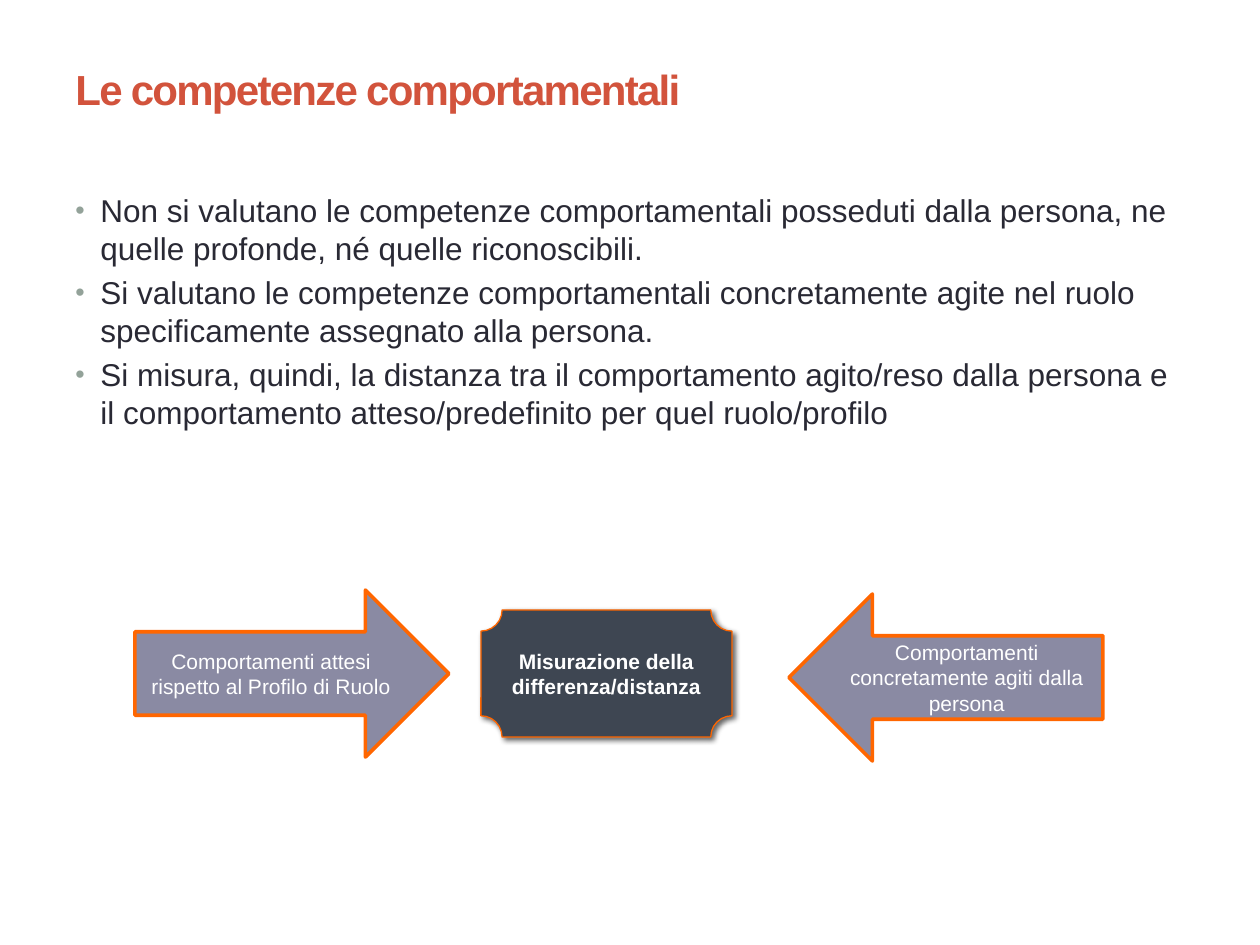
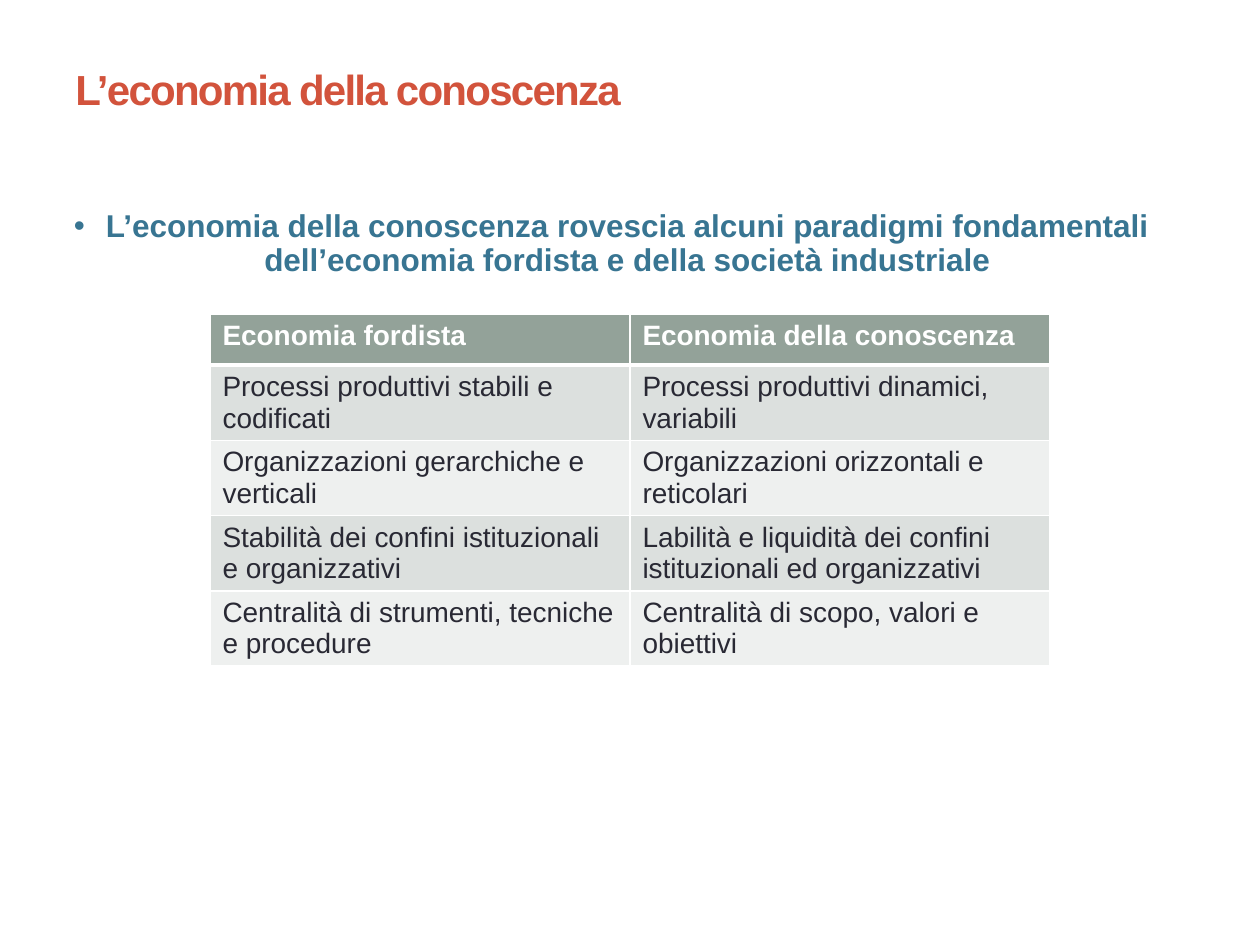
from lxml import etree
from pptx import Presentation
from pptx import util as u
from pptx.dml.color import RGBColor
from pptx.enum import shapes, text
from pptx.oxml import parse_xml
from pptx.oxml.ns import nsdecls, qn

PX = 914400 / 126
INK, WHITE, ORANGE, RED, SAGE = "292934", "FFFFFF", "FF6600", "D2533C", "93A299"
CENTER = text.PP_ALIGN.CENTER
MIDDLE = text.MSO_ANCHOR.MIDDLE


def color(value):
    return RGBColor.from_string(value)


def write(paragraph, words, size, ink, bold=False, leading=1.2, align=None):
    paragraph.alignment = align
    paragraph.line_spacing = u.Pt(round(size * leading, 1))
    run = paragraph.add_run()
    run.text = words
    run.font.name = "Arial"
    run.font.size = u.Pt(size)
    run.font.bold = bold
    run.font.color.rgb = color(ink)
    return run


presentation = Presentation()
presentation.slide_width = round(1260 * PX)
presentation.slide_height = round(945 * PX)

titles = ["Le competenze comportamentali", "L’economia della conoscenza"]
bullet_lists = [
    [
        "Non si valutano le competenze comportamentali posseduti dalla persona, ne quelle profonde, né quelle riconoscibili.",
        "Si valutano le competenze comportamentali concretamente agite nel ruolo specificamente assegnato alla persona.",
        "Si misura, quindi, la distanza tra il comportamento agito/reso dalla persona e il comportamento atteso/predefinito per quel ruolo/profilo",
    ],
    ["L’economia della conoscenza rovescia alcuni paradigmi fondamentali dell’economia fordista e della società industriale"],
]
bullet_styles = [
    dict(box=(63, 185, 1134, 665), indent=25, mark=SAGE, percent=85, ink=INK, bold=False, leading=1.2, align=None),
    dict(box=(40, 204, 1143, 69), indent=32, mark="387592", percent=100, ink="387592", bold=True, leading=1.08, align=CENTER),
]

slides = []
for title, bullets, style in zip(titles, bullet_lists, bullet_styles):
    slide = presentation.slides.add_slide(presentation.slide_layouts[6])
    slides.append(slide)

    title_box = slide.shapes.add_textbox(*[round(n * PX) for n in (63, 48, 1134, 82)])
    title_box.text_frame.word_wrap = True
    title_box.text_frame.vertical_anchor = MIDDLE
    run = write(title_box.text_frame.paragraphs[0], title, 24, RED, bold=True)
    run.font._element.set("spc", "-100")

    body = slide.shapes.add_textbox(*[round(n * PX) for n in style["box"]])
    body.text_frame.word_wrap = True
    for index, words in enumerate(bullets):
        paragraph = body.text_frame.add_paragraph() if index else body.text_frame.paragraphs[0]
        properties = paragraph._p.get_or_add_pPr()
        indent = round(style["indent"] * PX)
        properties.set("marL", str(indent))
        properties.set("indent", str(-indent))
        mark = etree.SubElement(properties, qn("a:buClr"))
        etree.SubElement(mark, qn("a:srgbClr"), val=style["mark"])
        etree.SubElement(properties, qn("a:buSzPct"), val=str(style["percent"] * 1000))
        etree.SubElement(properties, qn("a:buFont"), typeface="Arial")
        etree.SubElement(properties, qn("a:buChar"), char="•")
        if index:
            paragraph.space_before = u.Pt(3.6)
        write(paragraph, words, 18, style["ink"], style["bold"], style["leading"], style["align"])

competence_slide, economy_slide = slides

PLAQUE, ARROW = shapes.MSO_SHAPE.PLAQUE, shapes.MSO_SHAPE.RIGHT_ARROW
diagram = [
    (PLAQUE, (481, 610, 251, 127), "3E4652", 0.75, False, "Misurazione della differenza/distanza"),
    (ARROW, (135, 590, 314, 167), "8A8AA3", 2.08, False, "Comportamenti attesi rispetto al Profilo di Ruolo"),
    (ARROW, (789, 594, 314, 167), "8A8AA3", 2.08, True, "Comportamenti concretamente agiti dalla persona"),
]
for kind, box, fill, line_width, flipped, words in diagram:
    shape = competence_slide.shapes.add_shape(kind, *[round(n * PX) for n in box])
    shape.shadow.inherit = False
    shape.fill.solid()
    shape.fill.fore_color.rgb = color(fill)
    shape.line.color.rgb = color(ORANGE)
    shape.line.width = u.Pt(line_width)
    if flipped:
        shape._element.spPr.xfrm.set("flipH", "1")
    if kind == PLAQUE:
        effects = shape._element.spPr.find(qn("a:effectLst"))
        effects.append(parse_xml(
            f'<a:outerShdw {nsdecls("a")} blurRad="38100" dist="25400" dir="2700000" algn="tl" rotWithShape="0">'
            '<a:srgbClr val="000000"><a:alpha val="60000"/></a:srgbClr></a:outerShdw>'))
    shape.text_frame.word_wrap = True
    shape.text_frame.vertical_anchor = MIDDLE
    write(shape.text_frame.paragraphs[0], words, 12, WHITE, bold=kind == PLAQUE, align=CENTER)

comparison = [
    ("Economia fordista", "Economia della conoscenza"),
    ("Processi produttivi stabili e codificati", "Processi produttivi dinamici, variabili"),
    ("Organizzazioni gerarchiche e verticali", "Organizzazioni orizzontali e reticolari"),
    ("Stabilità dei confini istituzionali e organizzativi", "Labilità e liquidità dei confini istituzionali ed organizzativi"),
    ("Centralità di strumenti, tecniche e procedure", "Centralità di scopo, valori e obiettivi"),
]
frame = economy_slide.shapes.add_table(5, 2, *[round(n * PX) for n in (210, 314, 840, 351)])
table = frame.table
for column in table.columns:
    column.width = round(420 * PX)
for row_index, entries in enumerate(comparison):
    header = row_index == 0
    table.rows[row_index].height = round((51 if header else 75) * PX)
    for column_index, words in enumerate(entries):
        cell = table.cell(row_index, column_index)
        cell.fill.solid()
        cell.fill.fore_color.rgb = color(SAGE if header else "DCE0DE" if row_index % 2 else "EEF0EF")
        widths = {"lnL": 1, "lnR": 1, "lnT": 3 if row_index == 1 else 1, "lnB": 3 if header else 1}
        for position, (edge, width) in enumerate(widths.items()):
            cell._tc.get_or_add_tcPr().insert(position, parse_xml(
                f'<a:{edge} {nsdecls("a")} w="{width * 12700}"><a:solidFill>'
                f'<a:srgbClr val="{WHITE}"/></a:solidFill></a:{edge}>'))
        write(cell.text_frame.paragraphs[0], words, 16, WHITE if header else INK, header, 1.12)

presentation.save("out.pptx")
